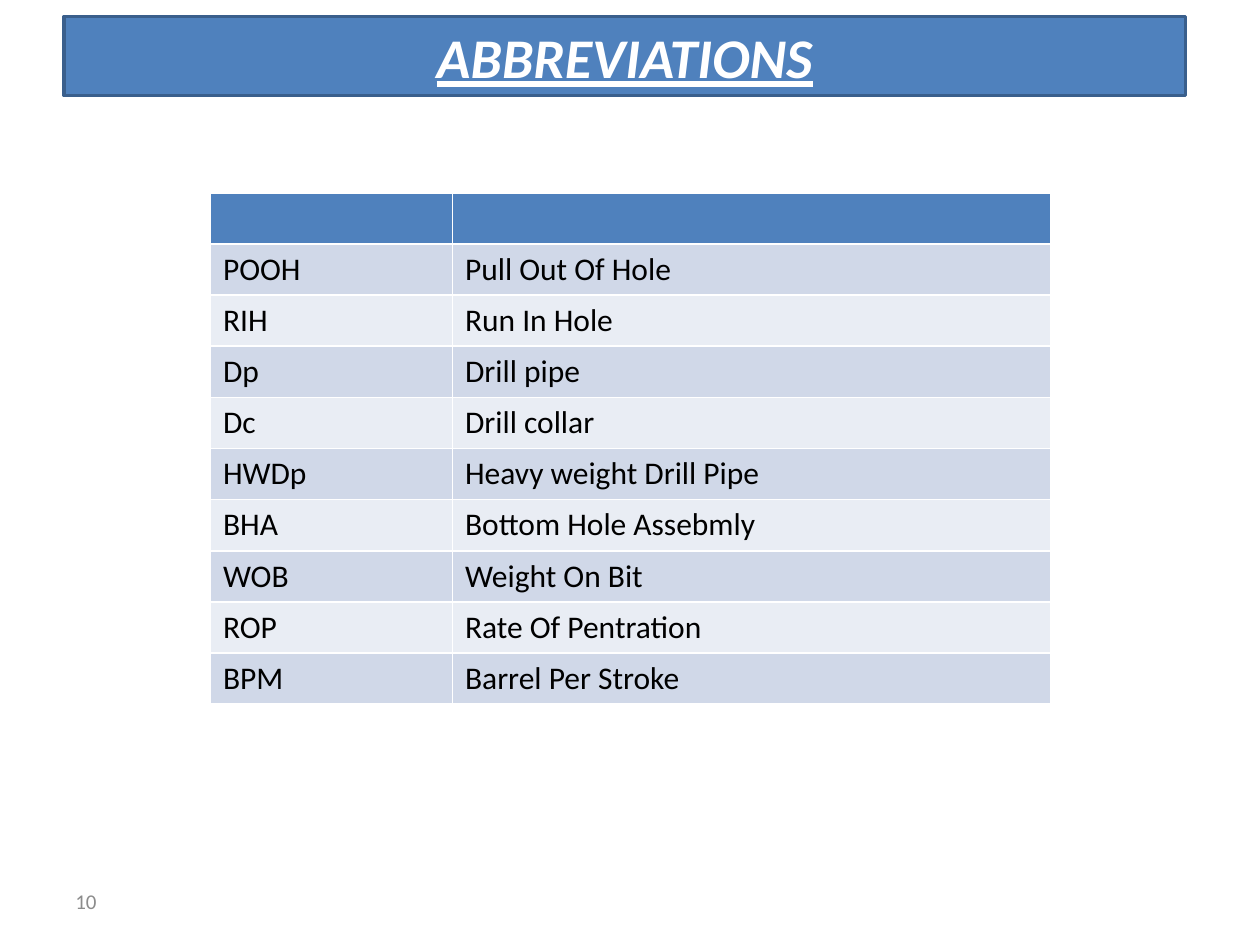
from pptx import Presentation
from pptx.dml.color import RGBColor
from pptx.enum.text import MSO_ANCHOR, PP_ALIGN
from pptx.util import Inches, Pt

MIDDLE = MSO_ANCHOR.MIDDLE
CENTER, LEFT = PP_ALIGN.CENTER, PP_ALIGN.LEFT

BLUE = RGBColor(0x4F, 0x81, 0xBD)
DARK_BLUE = RGBColor(0x3A, 0x5F, 0x8C)
BAND_DARK = RGBColor(0xD0, 0xD8, 0xE8)
BAND_LIGHT = RGBColor(0xE9, 0xED, 0xF4)
GRAY = RGBColor(0x8C, 0x8C, 0x8C)
BLACK = RGBColor(0, 0, 0)
WHITE = RGBColor(0xFF, 0xFF, 0xFF)

FONT = "Calibri"
TITLE_ONLY = 5
TITLE_BOX = (0.51, 0.13, 8.9, 0.63)
TABLE_BOX = (1.67, 1.53, 6.67, 4.06)
NUMBER_BOX = (0.5, 6.95, 2.33, 0.4)
COLUMN_SHARES = (0.288, 0.712)

ABBREVIATIONS = [
    ("POOH", "Pull Out Of Hole"),
    ("RIH", "Run In Hole"),
    ("Dp", "Drill pipe"),
    ("Dc", "Drill collar"),
    ("HWDp", "Heavy weight Drill Pipe"),
    ("BHA", "Bottom Hole Assebmly"),
    ("WOB", "Weight On Bit"),
    ("ROP", "Rate Of Pentration"),
    ("BPM", "Barrel Per Stroke"),
]


def write(frame, text, size, color, align=LEFT):
    frame.text = text
    para = frame.paragraphs[0]
    para.alignment = align
    para.font.name = FONT
    para.font.size = Pt(size)
    para.font.color.rgb = color
    return para


def format_title(slide, box, text):
    title = slide.shapes.title
    title.left, title.top, title.width, title.height = map(Inches, box)
    title.fill.solid()
    title.fill.fore_color.rgb = BLUE
    title.line.color.rgb = DARK_BLUE
    title.line.width = Pt(2)
    title.text_frame.vertical_anchor = MIDDLE
    para = write(title.text_frame, text, 32, WHITE, CENTER)
    para.font.bold = para.font.italic = para.font.underline = True


def add_abbreviation_table(slide, box, entries):
    rows = [("", ""), *entries]
    table = slide.shapes.add_table(
        len(rows), len(COLUMN_SHARES), *map(Inches, box)).table
    for column, share in zip(table.columns, COLUMN_SHARES):
        column.width = Inches(box[2] * share)
    for row_index, texts in enumerate(rows):
        band = BAND_DARK if row_index % 2 else BAND_LIGHT
        for column_index, text in enumerate(texts):
            cell = table.cell(row_index, column_index)
            cell.fill.solid()
            cell.fill.fore_color.rgb = band if row_index else BLUE
            write(cell.text_frame, text, 18, BLACK)


def add_page_number(slide, box, number):
    frame = slide.shapes.add_textbox(*map(Inches, box)).text_frame
    frame.word_wrap = True
    frame.vertical_anchor = MIDDLE
    write(frame, number, 12, GRAY)


def main():
    deck = Presentation()
    deck.slide_width, deck.slide_height = Inches(10), Inches(7.5)
    page = deck.slides.add_slide(deck.slide_layouts[TITLE_ONLY])
    add_page_number(page, NUMBER_BOX, "10")
    format_title(page, TITLE_BOX, "ABBREVIATIONS")
    add_abbreviation_table(page, TABLE_BOX, ABBREVIATIONS)
    deck.save("out.pptx")


if __name__ == "__main__":
    main()
